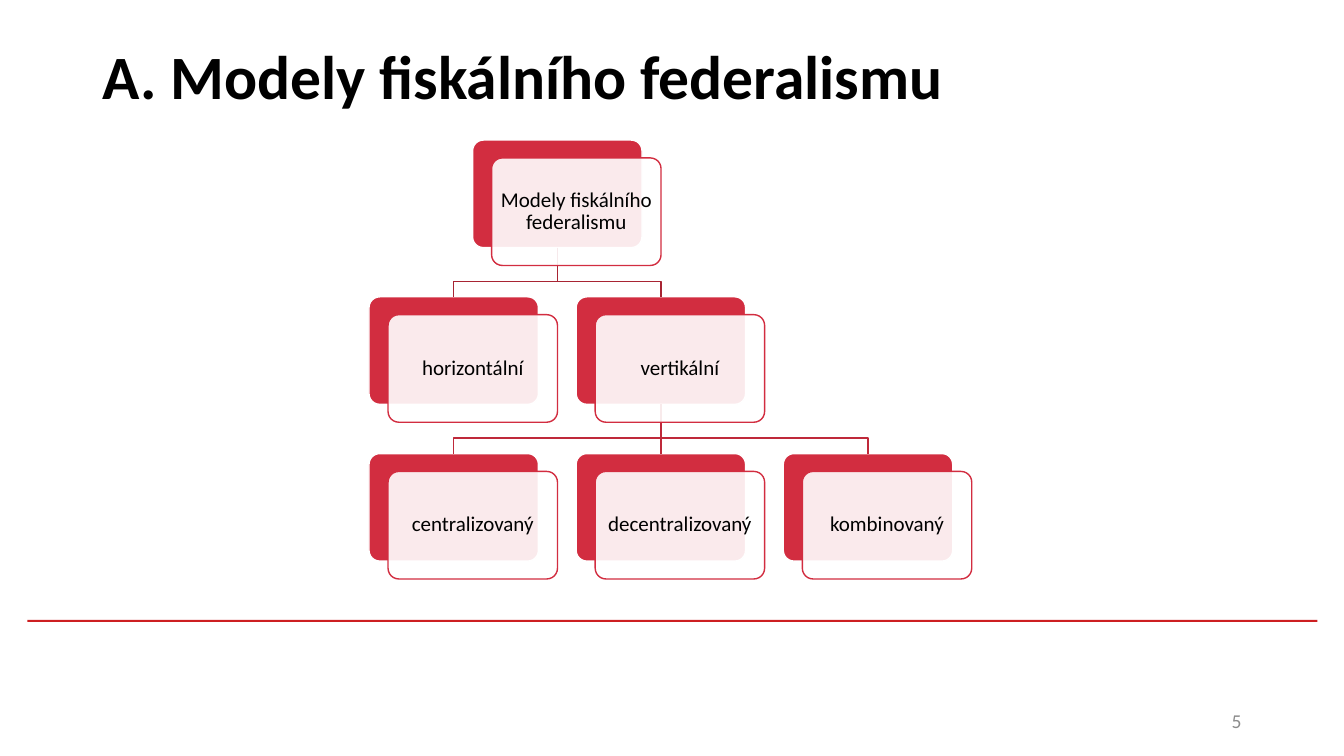
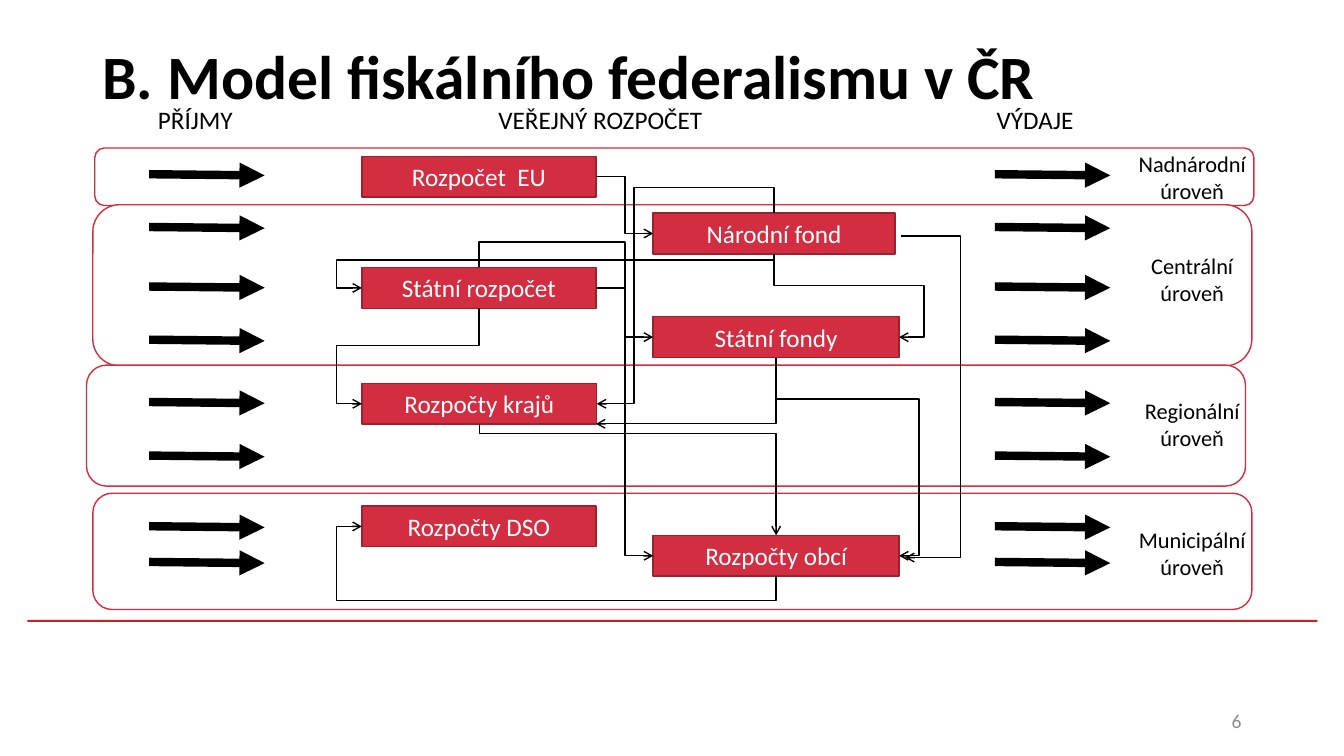
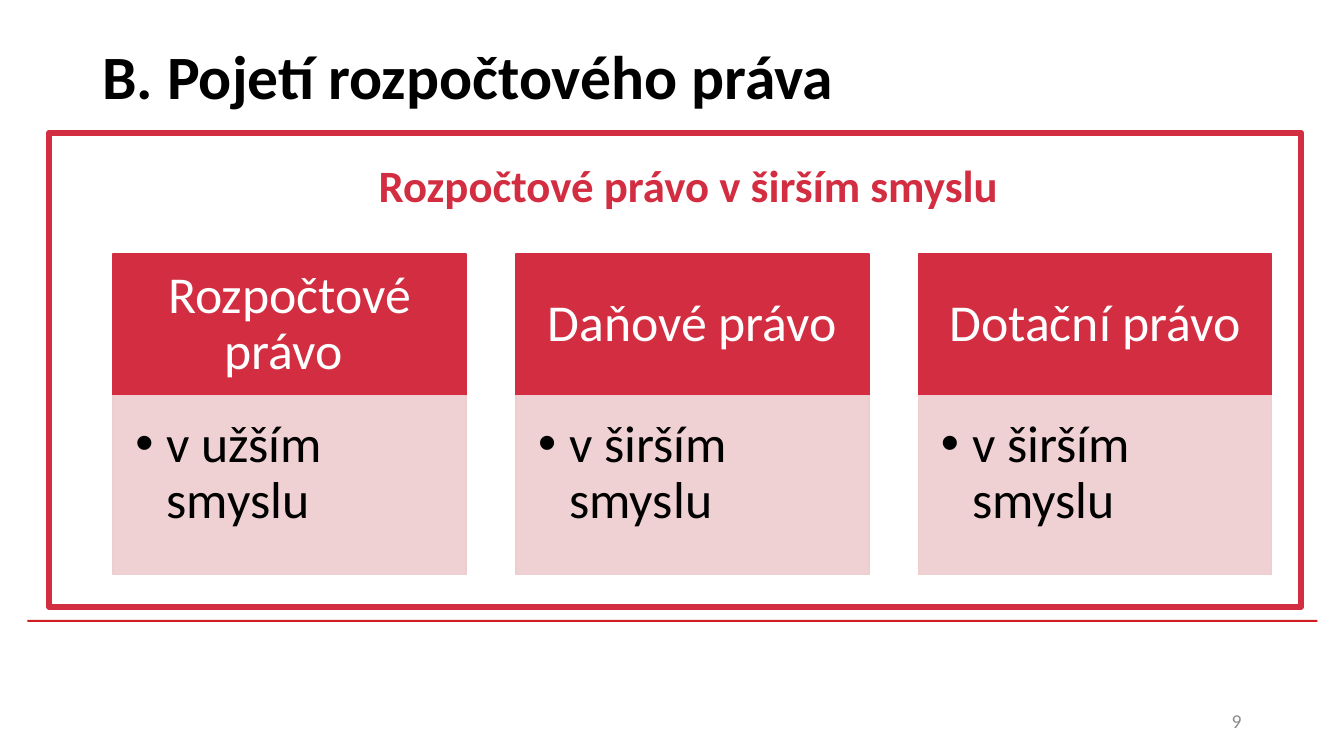
from collections import namedtuple

from lxml import etree
from pptx import Presentation
from pptx import util as u
from pptx.dml import color
from pptx.enum import shapes, text
from pptx.oxml import ns

COLORS = {
    "red": "D22D40", "dark_red": "9B212F", "rule": "CD1F21",
    "link_upper": "A82433", "link_lower": "BF293A", "pink": "EECDCF",
    "black": "000000", "white": "FFFFFF", "gray": "8C8C8C",
}
FONT = "Calibri"
INSETS = (0.25, 0.13, 0.25, 0.13)
TOP, LEFT, BOTTOM, RIGHT = range(4)
CENTER, MIDDLE = text.PP_ALIGN.CENTER, text.MSO_ANCHOR.MIDDLE
RECT = shapes.MSO_SHAPE.RECTANGLE
ROUNDED = shapes.MSO_SHAPE.ROUNDED_RECTANGLE

# An end of a connector, in cm; box is None where it is not joined
Port = namedtuple("Port", "x y side box")


def rgb(name):
    return color.RGBColor.from_string(COLORS[name])


def cm(*lengths):
    return [u.Cm(length) for length in lengths]


# ---- Text and shapes ----
def write(box, content, size, ink="black", bold=False, align=CENTER,
          anchor=MIDDLE, insets=INSETS, spacing=None, bullet_indent=None):
    frame = box.text_frame
    frame.word_wrap = True
    frame.vertical_anchor = anchor
    (frame.margin_left, frame.margin_top,
     frame.margin_right, frame.margin_bottom) = cm(*insets)
    frame.text = content
    para = frame.paragraphs[0]
    para.alignment = align
    if spacing:
        para.line_spacing = spacing
    if bullet_indent:
        properties = para._p.get_or_add_pPr()
        properties.set("marL", str(u.Cm(bullet_indent)))
        properties.set("indent", str(-u.Cm(bullet_indent)))
        etree.SubElement(properties, ns.qn("a:buFont"), typeface="Arial")
        etree.SubElement(properties, ns.qn("a:buChar"), char="•")
    for span in para.runs:
        span.font.name = FONT
        span.font.size = u.Pt(size)
        span.font.bold = bold
        span.font.color.rgb = rgb(ink)


def add_text(page, place, content, size, **style):
    box = page.shapes.add_textbox(*cm(*place))
    write(box, content, size, **style)
    return box


def add_box(page, place, fill, line=None, width=1, kind=RECT, corner=None,
            opacity=None):
    box = page.shapes.add_shape(kind, *cm(*place))
    box.shadow.inherit = False
    box.fill.solid()
    box.fill.fore_color.rgb = rgb(fill)
    if line:
        box.line.color.rgb = rgb(line)
        box.line.width = u.Pt(width)
    else:
        box.line.fill.background()
    if corner is not None:
        box.adjustments[0] = corner
    if opacity:
        paint = box._element.spPr.xpath("a:solidFill/a:srgbClr")[0]
        etree.SubElement(paint, ns.qn("a:alpha"), val=str(opacity * 1000))
    return box


# ---- Connectors ----
def port(box, side):
    x, y = box.left.cm, box.top.cm
    width, height = box.width.cm, box.height.cm
    dx, dy = [(0.5, 0), (0, 0.5), (0.5, 1), (1, 0.5)][side]
    return Port(x + dx * width, y + dy * height, side, box)


def add_line(page, start, end, ink="black", width=1, head=None,
             kind=shapes.MSO_CONNECTOR.STRAIGHT):
    line = page.shapes.add_connector(
        kind, *cm(start.x, start.y, end.x, end.y))
    if start.box is not None:
        line.begin_connect(start.box, start.side)
    if end.box is not None:
        line.end_connect(end.box, end.side)
    line.line.color.rgb = rgb(ink)
    line.line.width = u.Pt(width)
    properties = line._element.spPr
    if head:
        outline = properties.xpath("a:ln")[0]
        etree.SubElement(outline, ns.qn("a:tailEnd"), type=head)
    etree.SubElement(properties, ns.qn("a:effectLst"))
    return line


def add_elbow(page, start, end, lanes, ink="black", head="arrow"):
    """Bent connector; lanes are the coordinates at which it turns."""
    line = add_line(page, start, end, ink, head=head,
                    kind=shapes.MSO_CONNECTOR.ELBOW)
    dx, dy = end.x - start.x, end.y - start.y
    upright = start.side in (TOP, BOTTOM)
    width, height = abs(dx), abs(dy)
    rotation, flip_h, flip_v = 0, dx < 0, dy < 0
    axes = [(start.x, dx), (start.y, dy)]
    if upright:
        width, height = height, width
        rotation = 270 if dx > 0 else 90
        flip_h, flip_v = (dx > 0) == (dy > 0), False
        axes.reverse()
    line.left, line.top, line.width, line.height = cm(
        (start.x + end.x - width) / 2, (start.y + end.y - height) / 2,
        width, height)
    properties = line._element.spPr
    frame = properties.xpath("a:xfrm")[0]
    frame.rot, frame.flipH, frame.flipV = rotation, flip_h, flip_v
    geometry = properties.xpath("a:prstGeom")[0]
    geometry.set("prst", f"bentConnector{len(lanes) + 2}")
    guides = geometry.xpath("a:avLst")[0]
    for number, (lane, (origin, length)) in enumerate(zip(lanes, axes), 1):
        share = round((lane - origin) / length * 100000)
        etree.SubElement(guides, ns.qn("a:gd"), name=f"adj{number}",
                         fmla=f"val {share}")


# ---- Shared page parts ----
def add_page(deck, title, number):
    page = deck.slides.add_slide(deck.slide_layouts[6])
    add_box(page, (0.69, 15.62, 32.51, 0.05), "rule")
    add_text(page, (2.33, 0.05, 29.21, 3.68), title, 44, bold=True,
             align=text.PP_ALIGN.LEFT)
    add_text(page, (23.92, 17.66, 7.62, 1.01), number, 14, ink="gray",
             align=text.PP_ALIGN.RIGHT)
    return page


# ---- Page: tree of models ----
def build_tree(deck):
    page = add_page(deck, "A. Modely fiskálního federalismu", "5")
    nodes = {  # name: (column, row)
        "Modely fiskálního federalismu": (0.5, 0),
        "horizontální": (0, 1), "vertikální": (1, 1),
        "centralizovaný": (0, 2), "decentralizovaný": (1, 2),
        "kombinovaný": (2, 2),
    }
    places = {name: (9.3 + 5.22 * column, 3.53 + 3.95 * row, 4.27, 2.71)
              for name, (column, row) in nodes.items()}
    backs = {name: add_box(page, place, "red", "white", kind=ROUNDED,
                           corner=0.1)
             for name, place in places.items()}

    root, branch = "Modely fiskálního federalismu", "vertikální"
    for name, (column, row) in nodes.items():
        if row == 0:
            continue
        start = port(backs[root if row == 1 else branch], BOTTOM)
        end = port(backs[name], TOP)
        ink = "link_upper" if row == 1 else "link_lower"
        if abs(start.x - end.x) < 0.01:
            add_line(page, start, end, ink)
        else:
            add_elbow(page, start, end, [start.y + 0.85], ink, head=None)

    for name, (left, top, width, height) in places.items():
        panel = add_box(page, (left + 0.48, top + 0.45, width, height),
                        "white", "red", kind=ROUNDED, corner=0.1, opacity=90)
        write(panel, name, 15, insets=(0.15,) * 4, spacing=0.9)


# ---- Page: budgets and their flows ----
def build_flows(deck):
    page = add_page(deck, "B. Model fiskálního federalismu v ČR", "6")

    # Levels of government
    levels = [  # name, left, top, height, top of label
        ("Nadnárodní úroveň", 2.39, 3.73, 1.45, 3.66),
        ("Centrální úroveň", 2.34, 5.16, 4.06, 6.22),
        ("Regionální úroveň", 2.18, 9.2, 3.05, 9.88),
        ("Municipální úroveň", 2.34, 12.43, 2.93, 13.13),
    ]
    for name, left, top, height, label_top in levels:
        add_box(page, (left, top, 29.21, height), "white", "red",
                kind=ROUNDED)
    for name, left, top, height, label_top in levels:
        add_text(page, (27.95, label_top, 4.19, 1.63), name, 16,
                 anchor=text.MSO_ANCHOR.TOP)
    for name, left, width in [("PŘÍJMY", 3.02, 3.81),
                              ("VEŘEJNÝ ROZPOČET", 11.33, 7.6),
                              ("VÝDAJE", 24.18, 3.81)]:
        add_text(page, (left, 2.5, width, 1.03), name, 18)

    # Budgets
    def budget(name, left, top, width):
        box = add_box(page, (left, top, width, 1.03), "red", "dark_red")
        write(box, name, 18, ink="white")
        return box

    left_x, right_x = 9.12, 16.46
    union = budget("Rozpočet  EU", left_x, 3.94, 5.9)
    national = budget("Národní fond", right_x, 5.37, 6.1)
    state = budget("Státní rozpočet", left_x, 6.74, 5.9)
    regions = budget("Rozpočty krajů", left_x, 9.66, 5.92)
    towns = budget("Rozpočty obcí", right_x, 13.49, 6.2)
    funds = budget("Státní fondy", right_x, 7.98, 6.2)
    unions = budget("Rozpočty DSO", left_x, 12.75, 5.9)

    # Flows between budgets
    west, middle = 8.48, 15.75
    flows = [
        (port(national, TOP), port(regions, RIGHT), [4.72, 15.98]),
        (Port(22.71, 5.95, RIGHT, None), Port(22.81, 14.05, RIGHT, None),
         [24.21]),
        (port(state, TOP), port(towns, LEFT), [6.1, middle]),
        (port(state, BOTTOM), port(regions, LEFT), [8.71, west]),
        (port(funds, BOTTOM), port(towns, RIGHT), [10.06, 23.16]),
        (port(regions, BOTTOM), port(towns, TOP), [10.92]),
        (port(national, BOTTOM), port(state, LEFT), [6.55, west]),
        (port(union, RIGHT), port(national, LEFT), [middle]),
        (port(state, RIGHT), port(funds, LEFT), [middle]),
        (port(funds, BOTTOM), Port(15.02, 10.68, BOTTOM, None), []),
        (port(towns, BOTTOM), port(unions, LEFT), [15.14, west]),
        (port(national, BOTTOM), port(funds, RIGHT), [7.19, 23.29]),
    ]
    for start, end, lanes in flows:
        add_elbow(page, start, end, lanes)

    # Revenue and expenditure arrows
    for x in (3.76, 25.07):
        for y in (4.39, 5.72, 7.22, 8.56, 10.13, 11.48, 13.26, 14.16):
            add_line(page, Port(x, y, RIGHT, None),
                     Port(x + 2.91, y + 0.03, LEFT, None),
                     width=6, head="triangle")


# ---- Page: concept of budget law ----
def build_concept(deck):
    page = add_page(deck, "B. Pojetí rozpočtového práva", "9")
    frame = add_box(page, (1.24, 3.35, 31.55, 11.94), "white", "red", 4.5)
    # The frame lies behind the title
    page.shapes._spTree.insert(2, frame._element)
    add_text(page, (2.87, 3.84, 28.96, 1.63),
             "Rozpočtové právo v širším smyslu", 32, ink="red", bold=True)
    columns = [("Rozpočtové právo ", "v užším smyslu"),
               ("Daňové právo", "v širším smyslu"),
               ("Dotační právo", "v širším smyslu")]
    for index, (name, scope) in enumerate(columns):
        left = 2.85 + 10.15 * index
        head = add_box(page, (left, 6.4, 8.9, 3.56), "red", "red")
        write(head, name, 37, ink="white", spacing=0.9,
              insets=(0.74, 0.41, 0.74, 0.41))
        body = add_box(page, (left, 9.96, 8.9, 4.52), "pink", "pink",
                       opacity=90)
        write(body, scope, 37, align=text.PP_ALIGN.LEFT,
              anchor=text.MSO_ANCHOR.TOP, insets=(0.56, 0.56, 0.74, 0.81),
              spacing=0.9, bullet_indent=0.79)


def main():
    deck = Presentation()
    deck.slide_width, deck.slide_height = cm(33.87, 19.05)
    build_tree(deck)
    build_flows(deck)
    build_concept(deck)
    deck.save("out.pptx")


if __name__ == "__main__":
    main()
